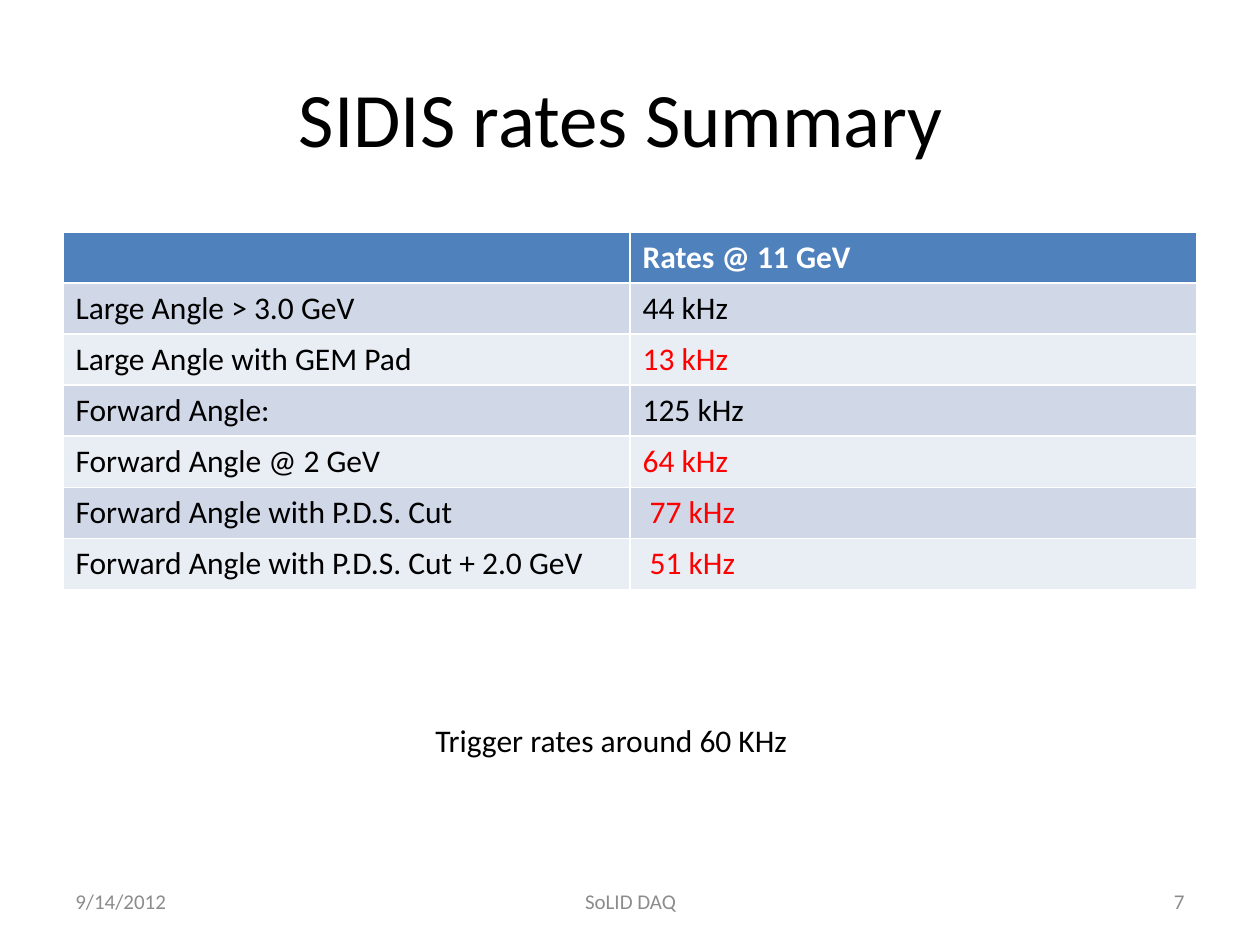
from pptx import Presentation
from pptx.dml.color import RGBColor
from pptx.enum.text import MSO_ANCHOR, PP_ALIGN
from pptx.util import Inches, Pt

LEFT, CENTER, RIGHT = PP_ALIGN.LEFT, PP_ALIGN.CENTER, PP_ALIGN.RIGHT
TOP, MIDDLE = MSO_ANCHOR.TOP, MSO_ANCHOR.MIDDLE
BLACK = RGBColor(0x00, 0x00, 0x00)
WHITE = RGBColor(0xFF, 0xFF, 0xFF)
RED = RGBColor(0xFF, 0x00, 0x00)
GRAY = RGBColor(0x8C, 0x8C, 0x8C)
HEADER_BLUE = RGBColor(0x4F, 0x81, 0xBD)
BANDS = [RGBColor(0xE9, 0xED, 0xF4), RGBColor(0xD0, 0xD8, 0xE8)]

presentation = Presentation()
presentation.slide_width = Inches(10)
presentation.slide_height = Inches(7.5)
slide = presentation.slides.add_slide(presentation.slide_layouts[6])

MARGIN = presentation.slide_width // 20
CONTENT_WIDTH = presentation.slide_width - 2 * MARGIN


def style_paragraph(paragraph, size, color, bold=False):
    paragraph.font.name = "Calibri"
    paragraph.font.size = Pt(size)
    paragraph.font.color.rgb = color
    paragraph.font.bold = bold


def add_text(text, left, top, width, height, size, color, alignment, anchor):
    shape = slide.shapes.add_textbox(left, top, width, height)
    frame = shape.text_frame
    frame.word_wrap = True
    frame.vertical_anchor = anchor
    paragraph = frame.paragraphs[0]
    paragraph.text = text
    paragraph.alignment = alignment
    style_paragraph(paragraph, size, color)


add_text("SIDIS rates Summary ", MARGIN, Inches(0.3), CONTENT_WIDTH, Inches(1.25),
         44, BLACK, CENTER, MIDDLE)

rates = [
    ("", "Rates @ 11 GeV", WHITE),
    ("Large Angle > 3.0 GeV", "44 kHz", BLACK),
    ("Large Angle with GEM Pad", "13 kHz", RED),
    ("Forward Angle:", "125 kHz", BLACK),
    ("Forward Angle @ 2 GeV", "64 kHz", RED),
    ("Forward Angle with P.D.S. Cut", " 77 kHz", RED),
    ("Forward Angle with P.D.S. Cut + 2.0 GeV", " 51 kHz", RED),
]
table = slide.shapes.add_table(len(rates), 2, MARGIN, Inches(1.84),
                               CONTENT_WIDTH, Inches(2.84)).table
for row, (trigger, rate, rate_color) in enumerate(rates):
    is_header = row == 0
    for column, (text, color) in enumerate([(trigger, BLACK), (rate, rate_color)]):
        cell = table.cell(row, column)
        cell.text = text
        cell.fill.solid()
        cell.fill.fore_color.rgb = HEADER_BLUE if is_header else BANDS[row % 2]
        style_paragraph(cell.text_frame.paragraphs[0], 18, color, is_header)

add_text("Trigger rates around 60 KHz ", Inches(0.42), Inches(5.67), Inches(8.92), Inches(0.4),
         18, BLACK, CENTER, TOP)

footers = [
    ("9/14/2012", 0.5, 2.33, LEFT),
    ("SoLID DAQ", 3.42, 3.17, CENTER),
    ("7", 7.17, 2.33, RIGHT),
]
for text, left, width, alignment in footers:
    add_text(text, Inches(left), Inches(6.95), Inches(width), Inches(0.4),
             12, GRAY, alignment, MIDDLE)

presentation.save("out.pptx")
